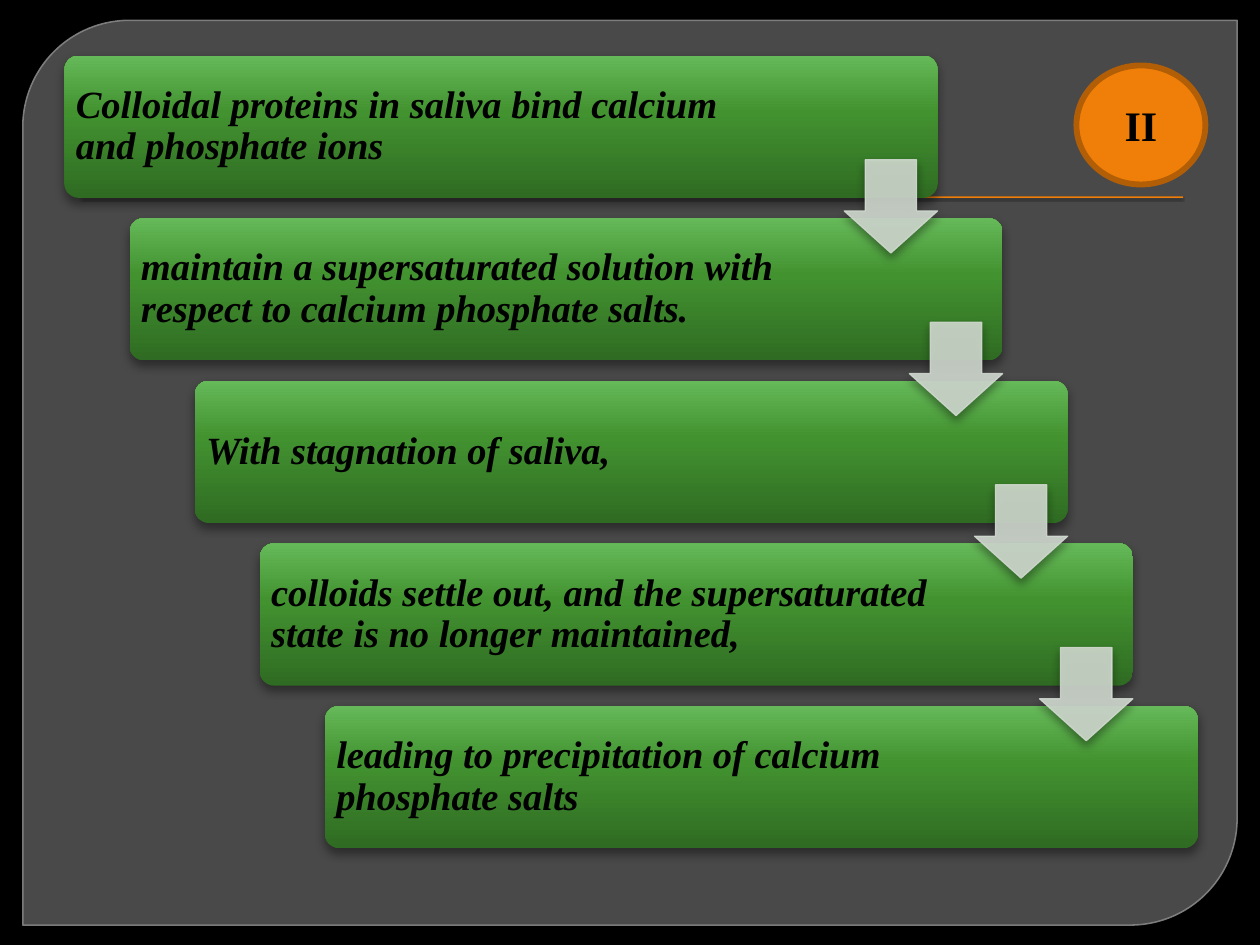
import pptx
import pptx.dml.color
import pptx.enum.shapes
import pptx.enum.text
import pptx.oxml
import pptx.oxml.ns
import pptx.util

Cm = pptx.util.Cm
Pt = pptx.util.Pt
SHAPES = pptx.enum.shapes.MSO_SHAPE
NAMESPACE = pptx.oxml.ns.nsdecls("a")
FONT = "Times New Roman"

COLORS = {
    "background": "000000",
    "panel": "717171",
    "panel_line": "898989",
    "accent": "F07F09",
    "accent_line": "B25E07",
    "step_dark": "2F6B22",
    "step_middle": "429230",
    "step_light": "66B959",
    "arrow": "D0D9CF",
    "text": "000000",
    "shadow": "000000",
}

STEPS = [
    "Colloidal proteins in saliva bind calcium and phosphate ions",
    "maintain a supersaturated solution with respect to calcium phosphate salts.",
    "With stagnation of saliva,",
    "colloids settle out, and the supersaturated state is no longer maintained,",
    "leading to precipitation of calcium phosphate salts",
]


def rgb(name):
    return pptx.dml.color.RGBColor.from_string(COLORS[name])


def set_fill(fill, name, opacity=100):
    fill.solid()
    fill.fore_color.rgb = rgb(name)
    if opacity < 100:
        color = fill._xPr.find(".//" + pptx.oxml.ns.qn("a:srgbClr"))
        color.append(pptx.oxml.parse_xml(
            f'<a:alpha {NAMESPACE} val="{opacity * 1000}"/>'))


def set_gradient(shape, stops, angle):
    stop_xml = "".join(
        f'<a:gs pos="{position * 1000}"><a:srgbClr val="{COLORS[name]}"/></a:gs>'
        for position, name in stops)
    gradient = pptx.oxml.parse_xml(
        f'<a:gradFill {NAMESPACE} rotWithShape="1"><a:gsLst>{stop_xml}</a:gsLst>'
        f'<a:lin ang="{angle * 60000}" scaled="0"/></a:gradFill>')
    geometry = shape._element.spPr.find(pptx.oxml.ns.qn("a:prstGeom"))
    geometry.addnext(gradient)


def set_shadow(shape, opacity, blur, distance):
    effects = shape._element.spPr.find(pptx.oxml.ns.qn("a:effectLst"))
    effects.append(pptx.oxml.parse_xml(
        f'<a:outerShdw {NAMESPACE} blurRad="{Pt(blur)}" dist="{Pt(distance)}" '
        f'dir="5400000" rotWithShape="0"><a:srgbClr val="{COLORS["shadow"]}">'
        f'<a:alpha val="{opacity * 1000}"/></a:srgbClr></a:outerShdw>'))


def add_shape(slide, kind, box, adjustments=()):
    shape = slide.shapes.add_shape(kind, *(Cm(length) for length in box))
    shape.shadow.inherit = False
    shape.line.fill.background()
    for index, value in enumerate(adjustments):
        shape.adjustments[index] = value
    return shape


def set_line(shape, name, width, opacity=100):
    set_fill(shape.line.fill, name, opacity)
    shape.line.width = Pt(width)


def add_run(paragraph, text, size, italic=False):
    run = paragraph.add_run()
    run.text = text
    run.font.name = FONT
    run.font.size = Pt(size)
    run.font.bold = True
    run.font.italic = italic
    run.font.color.rgb = rgb("text")


def add_backdrop(slide, box):
    left, top, width, height = box
    set_fill(slide.background.fill, "background")
    panel = add_shape(slide, SHAPES.ROUND_2_DIAG_RECTANGLE, box, (0.118, 0))
    set_fill(panel.fill, "panel", 65)
    set_line(panel, "panel_line", 0.87, 88)
    rule = add_shape(slide, SHAPES.RECTANGLE,
                     (left + 1.17, top + 3.55, width - 2.26, 0.03))
    set_fill(rule.fill, "accent")
    set_shadow(rule, 75, 1, 1)


def add_step(slide, box, text):
    left, top, width, height = box
    card = add_shape(slide, SHAPES.ROUNDED_RECTANGLE, box, (0.1,))
    set_gradient(card, [(0, "step_dark"), (60, "step_middle"),
                        (100, "step_light")], 270)
    set_shadow(card, 40, 5.2, 3)
    label = slide.shapes.add_textbox(Cm(left), Cm(top), Cm(14.43), Cm(height))
    frame = label.text_frame
    frame.word_wrap = True
    frame.vertical_anchor = pptx.enum.text.MSO_ANCHOR.MIDDLE
    frame.margin_left = frame.margin_right = Cm(0.23)
    frame.margin_top = frame.margin_bottom = Cm(0.23)
    paragraph = frame.paragraphs[0]
    paragraph.line_spacing = 0.9
    add_run(paragraph, text, 22, italic=True)


def add_arrow(slide, box):
    arrow = add_shape(slide, SHAPES.DOWN_ARROW, box, (0.55, 0.45))
    set_fill(arrow.fill, "arrow", 90)
    set_line(arrow, "arrow", 0.75, 90)
    set_shadow(arrow, 40, 5.2, 3)


def add_staircase(slide, box):
    left, top, width, height = box
    step_width, step_height, arrow_size = 17.6, 2.87, 1.88
    shift = (width - step_width) / (len(STEPS) - 1)
    drop = (height - step_height) / (len(STEPS) - 1)
    corners = [(left + index * shift, top + index * drop)
               for index in range(len(STEPS))]
    for (x, y), text in zip(corners, STEPS):
        add_step(slide, (x, y, step_width, step_height), text)
    for x, y in corners[:-1]:
        add_arrow(slide, (x + step_width - arrow_size, y + 2.1,
                          arrow_size, arrow_size))


def add_badge(slide, box, text):
    badge = add_shape(slide, SHAPES.OVAL, box)
    set_fill(badge.fill, "accent")
    set_line(badge, "accent_line", 3.35)
    frame = badge.text_frame
    frame.vertical_anchor = pptx.enum.text.MSO_ANCHOR.MIDDLE
    paragraph = frame.paragraphs[0]
    paragraph.alignment = pptx.enum.text.PP_ALIGN.CENTER
    add_run(paragraph, text, 24)


def main():
    presentation = pptx.Presentation()
    presentation.slide_width = Cm(25.4)
    presentation.slide_height = Cm(19.05)
    slide = presentation.slides.add_slide(presentation.slide_layouts[6])
    add_backdrop(slide, (0.46, 0.41, 24.48, 18.24))
    add_staircase(slide, (1.3, 1.12, 22.85, 15.98))
    add_badge(slide, (21.7, 1.32, 2.6, 2.4), "II")
    presentation.save("out.pptx")


if __name__ == "__main__":
    main()
